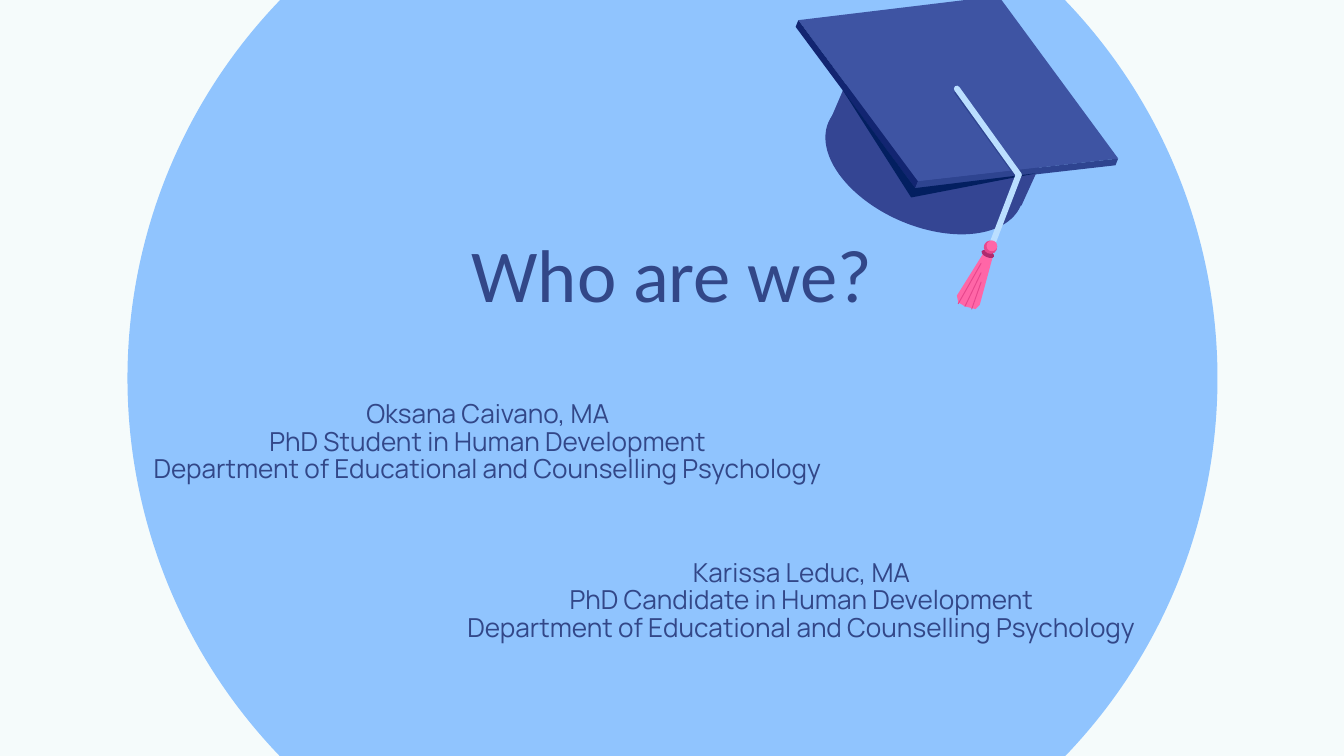
"""Build the "Who are we?" slide with two presenters and a graduation cap."""
from dataclasses import dataclass

from lxml import etree
from pptx import Presentation
from pptx.dml.color import RGBColor
from pptx.enum.shapes import MSO_CONNECTOR, MSO_SHAPE
from pptx.enum.text import MSO_ANCHOR, MSO_AUTO_SIZE, PP_ALIGN
from pptx.oxml.ns import qn
from pptx.util import Cm, Pt


@dataclass(frozen=True)
class Theme:
    background: str = "F5FBFB"
    circle: str = "90C4FE"
    ink: str = "324788"
    title_font: str = "Calibri"
    body_font: str = "Manrope"
    title_size: int = 40
    body_size: int = 14
    crown: str = "344593"
    board: str = "3E54A3"
    edge: str = "2E4490"
    side: str = "122571"
    underside: str = "031F60"
    cord: str = "BBDFFF"
    tassel: str = "FF66A7"
    pleat: str = "E7478D"
    band: str = "AF2A6E"


THEME = Theme()
SLIDE_SIZE = (25.4, 14.29)
CIRCLE_BOX = (2.41, -3.15, 20.6, 20.6)
HEADING = "Who are we?"
HEADING_BOX = (7.57, 4.98, 10.26, 1.27)
DEPARTMENT = "Department of Educational and Counselling Psychology"
PRESENTERS = {
    1: (["Oksana Caivano, MA", "PhD Student in Human Development", DEPARTMENT],
        (2.26, 7.34, 13.92, 2.24)),
    3: (["Karissa Leduc, MA", "PhD Candidate in Human Development", DEPARTMENT],
        (8.33, 10.34, 13.64, 1.6)),
}

CAP_UNIT = 2.54
CAP_TILT = 23.5
BACK, LEFT, FRONT, RIGHT = (7.43, -0.03), (5.94, 0.15), (6.83, 1.35), (8.32, 1.18)
CROWN = [(6.41, 0.35), (6.17, 0.91), (7.6, 1.53), (7.85, 0.98)]
UNDERSIDE = [(6.27, 0.67), (6.78, 1.47), (7.71, 1.29), (6.81, 1.4)]
CORD_SHADE = [(7.1, 0.69), (7.52, 1.27), (7.57, 1.26), (7.13, 0.67)]
CORD = [(7.12, 0.66), (7.58, 1.3), (7.37, 1.85)]
TASSEL = [(7.32, 1.88), (7.12, 2.2), (7.13, 2.25), (7.18, 2.28),
          (7.26, 2.3), (7.29, 2.27), (7.39, 1.9)]
PLEATS = [((7.3, 1.96 + 0.07 * i), (7.13 + 0.05 * i, 2.26 + 0.02 * i)) for i in range(3)]


def color_of(code):
    return RGBColor.from_string(code)


def paint(shape, color):
    shape.fill.solid()
    shape.fill.fore_color.rgb = color_of(color)
    shape.line.fill.background()
    shape.shadow.inherit = False


def place(point):
    return [Cm(value * CAP_UNIT) for value in point]


def lower(point):
    return point[0] - 0.02, point[1] + 0.05


def polygon(shapes, color, points):
    start, *rest = map(place, points)
    builder = shapes.build_freeform(*start)
    builder.add_line_segments(rest, close=True)
    paint(builder.convert_to_shape(), color)


def oval(shapes, color, center, width, height):
    corner = (center[0] - width / 2, center[1] - height / 2)
    shape = shapes.add_shape(MSO_SHAPE.OVAL, *place(corner), *place((width, height)))
    shape.rotation = CAP_TILT
    paint(shape, color)


def strand(shapes, color, start, end, weight):
    line = shapes.add_connector(MSO_CONNECTOR.STRAIGHT, *place(start), *place(end))
    line.line.color.rgb = color_of(color)
    line.line.width = Pt(weight)
    properties = line.element.find(qn("p:spPr"))
    properties.find(qn("a:ln")).set("cap", "rnd")
    etree.SubElement(properties, qn("a:effectLst"))


def draw_cap(slide):
    shapes = slide.shapes.add_group_shape().shapes
    oval(shapes, THEME.crown, (6.88, 1.22), 1.56, 0.92)
    polygon(shapes, THEME.crown, CROWN)
    polygon(shapes, THEME.board, [BACK, LEFT, FRONT, RIGHT])
    polygon(shapes, THEME.edge, CORD_SHADE)
    for color, start, end in [(THEME.side, LEFT, FRONT), (THEME.edge, FRONT, RIGHT)]:
        polygon(shapes, color, [start, end, lower(end), lower(start)])
    polygon(shapes, THEME.underside, UNDERSIDE)
    polygon(shapes, THEME.tassel, TASSEL)
    for start, end in PLEATS:
        strand(shapes, THEME.pleat, start, end, 0.5)
    oval(shapes, THEME.band, (7.35, 1.89), 0.1, 0.05)
    for start, end in zip(CORD, CORD[1:]):
        strand(shapes, THEME.cord, start, end, 3.2)
    oval(shapes, THEME.pleat, (7.37, 1.84), 0.1, 0.1)
    oval(shapes, THEME.tassel, (7.38, 1.83), 0.08, 0.08)


def write(holder, lines, *, box, font, size, anchor, spacing=1.0):
    holder.left, holder.top, holder.width, holder.height = map(Cm, box)
    frame = holder.text_frame
    frame.text = "\n".join(lines)
    frame.word_wrap = True
    frame.auto_size = MSO_AUTO_SIZE.NONE
    frame.vertical_anchor = anchor
    frame.margin_left = frame.margin_right = Cm(0.25)
    frame.margin_top = frame.margin_bottom = Cm(0.25)
    for paragraph in frame.paragraphs:
        paragraph.alignment = PP_ALIGN.CENTER
        paragraph.line_spacing = spacing
        paragraph.space_before = paragraph.space_after = Pt(0)
        for run in paragraph.runs:
            run.font.name, run.font.size, run.font.bold = font, Pt(size), False
            run.font.color.rgb = color_of(THEME.ink)


def main():
    deck = Presentation()
    deck.slide_width, deck.slide_height = map(Cm, SLIDE_SIZE)
    slide = deck.slides.add_slide(deck.slide_layouts.get_by_name("Comparison"))
    slide.background.fill.solid()
    slide.background.fill.fore_color.rgb = color_of(THEME.background)

    heading = slide.shapes.title
    circle = slide.shapes.add_shape(MSO_SHAPE.OVAL, *map(Cm, CIRCLE_BOX))
    paint(circle, THEME.circle)
    heading.element.addprevious(circle.element)
    write(heading, [HEADING], box=HEADING_BOX, font=THEME.title_font,
          size=THEME.title_size, anchor=MSO_ANCHOR.BOTTOM)

    for holder in list(slide.placeholders)[1:]:
        index = holder.placeholder_format.idx
        if index in PRESENTERS:
            lines, box = PRESENTERS[index]
            write(holder, lines, box=box, font=THEME.body_font,
                  size=THEME.body_size, anchor=MSO_ANCHOR.TOP, spacing=0.88)
        else:
            holder.element.getparent().remove(holder.element)

    draw_cap(slide)
    deck.save("out.pptx")


if __name__ == "__main__":
    main()
